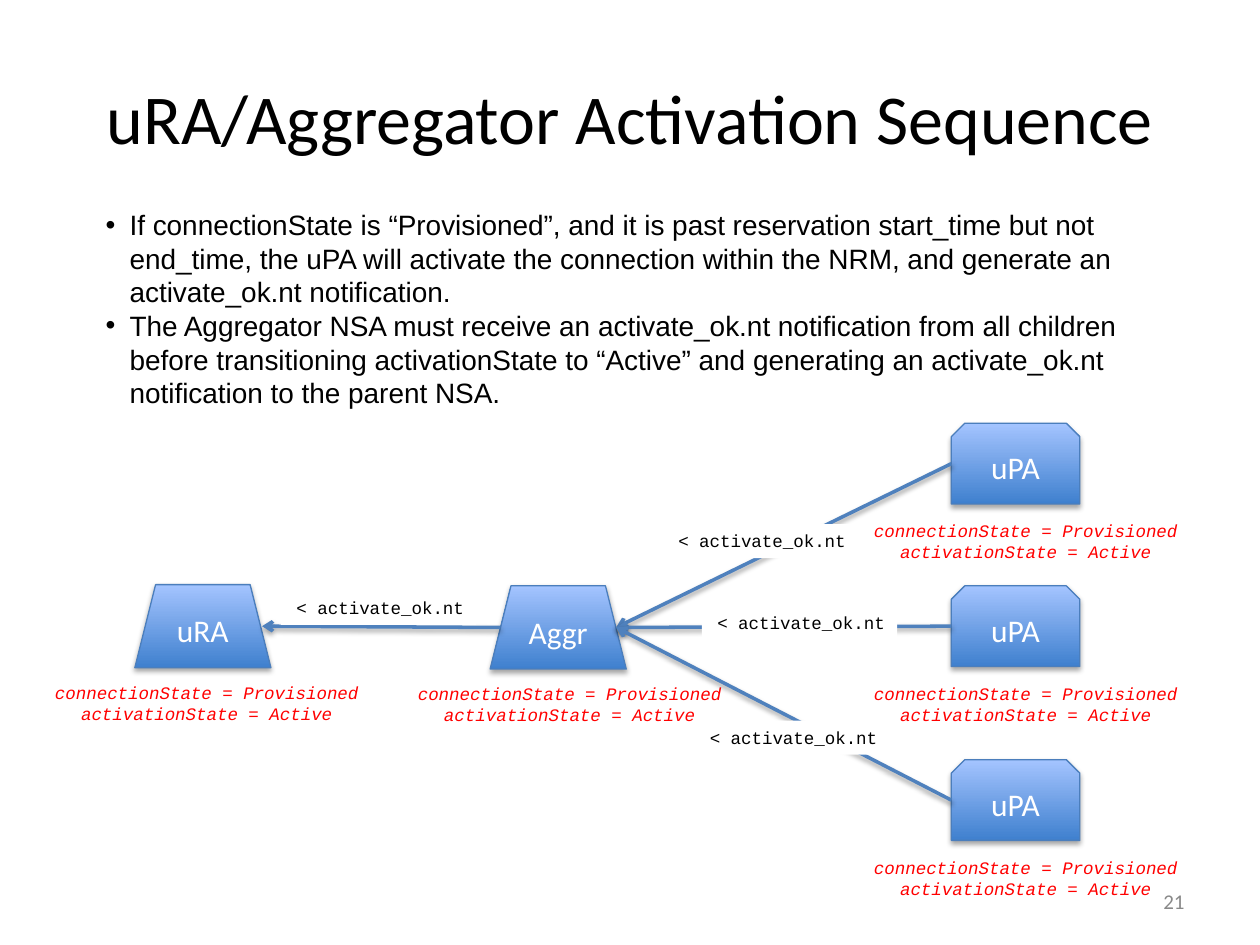
from dataclasses import dataclass

from lxml.etree import SubElement
from pptx import Presentation
from pptx.dml.color import RGBColor
from pptx.enum.shapes import MSO_CONNECTOR as Connector, MSO_SHAPE as Preset
from pptx.enum.text import MSO_ANCHOR as Anchor, PP_ALIGN as Align
from pptx.oxml.ns import qn
from pptx.util import Inches, Pt

STATE = ["connectionState = Provisioned", "activationState = Active"]
MESSAGE = "< activate_ok.nt"
BULLETS = [
    "If connectionState is “Provisioned”, and it is past reservation start_time "
    "but not end_time, the uPA will activate the connection within the NRM, "
    "and generate an activate_ok.nt notification.",
    "The Aggregator NSA must receive an activate_ok.nt notification from all "
    "children before transitioning activationState to “Active” and generating "
    "an activate_ok.nt notification to the parent NSA.",
]


@dataclass(frozen=True)
class TextStyle:
    font: str
    size: float
    color: str
    align: Align = Align.CENTER
    anchor: Anchor = Anchor.TOP
    italic: bool = False


@dataclass(frozen=True)
class Node:
    name: str
    preset: Preset
    left: float
    top: float
    width: float
    height: float
    state_left: float


@dataclass(frozen=True)
class Message:
    start: tuple[float, float]
    end: tuple[float, float]
    label: tuple[float, float]


TITLE = TextStyle("Calibri", 40, "000000", anchor=Anchor.MIDDLE)
BODY = TextStyle("Arial", 16, "000000", Align.LEFT)
NODE = TextStyle("Calibri", 18, "FFFFFF", anchor=Anchor.MIDDLE)
STATUS = TextStyle("Courier New", 10, "FF0000", italic=True)
LABEL = TextStyle("Courier New", 10, "000000", Align.RIGHT)
NUMBER = TextStyle("Calibri", 12, "898989", Align.RIGHT, Anchor.MIDDLE)

PROVIDER_TOPS = [3.36, 4.65, 6.03]
NODES = [
    Node("uRA", Preset.TRAPEZOID, 1.07, 4.64, 1.08, 0.66, 0.29),
    Node("Aggr", Preset.TRAPEZOID, 3.89, 4.65, 1.08, 0.66, 3.17),
] + [
    Node("uPA", Preset.SNIP_2_SAME_RECTANGLE, 7.55, top, 1.02, 0.64, 6.79)
    for top in PROVIDER_TOPS
]
PROVIDER_LABELS = [(5.26, 4.16), (5.57, 4.81), (5.51, 5.72)]
MESSAGES = [Message((3.97, 4.98), (2.08, 4.97), (2.23, 4.69))] + [
    Message((7.55, top + 0.32), (4.89, 4.98), label)
    for top, label in zip(PROVIDER_TOPS, PROVIDER_LABELS)
]


def rgb(color: str) -> RGBColor:
    return RGBColor.from_string(color)


def write(box, lines: list[str], style: TextStyle, wrap: bool = True) -> None:
    frame = box.text_frame
    frame.word_wrap = wrap
    frame.vertical_anchor = style.anchor
    frame.text = "\n".join(lines)
    for para in frame.paragraphs:
        para.alignment = style.align
        para.font.name = style.font
        para.font.size = Pt(style.size)
        para.font.color.rgb = rgb(style.color)
        para.font.italic = style.italic


def add_text(page, left: float, top: float, width: float, height: float,
             lines: list[str], style: TextStyle):
    box = page.shapes.add_textbox(
        Inches(left), Inches(top), Inches(width), Inches(height))
    write(box, lines, style)
    return box


def add_bullets(box) -> None:
    for para in box.text_frame.paragraphs:
        properties = para._p.get_or_add_pPr()
        properties.set("marL", str(Inches(0.19)))
        properties.set("indent", str(-Inches(0.19)))
        SubElement(properties, qn("a:buFont"), typeface="Arial")
        SubElement(properties, qn("a:buChar"), char="•")


def add_shadow(item, distance: float, opacity: int) -> None:
    effects = SubElement(item._element.spPr, qn("a:effectLst"))
    shadow = SubElement(
        effects, qn("a:outerShdw"), blurRad=str(Pt(3.1)),
        dist=str(Pt(distance)), dir="5400000", rotWithShape="0")
    color = SubElement(shadow, qn("a:srgbClr"), val="000000")
    SubElement(color, qn("a:alpha"), val=str(opacity * 1000))


def add_node(page, node: Node) -> None:
    box = page.shapes.add_shape(
        node.preset, Inches(node.left), Inches(node.top),
        Inches(node.width), Inches(node.height))
    box.fill.gradient()
    box.fill.gradient_angle = 90
    for stop, position, color in zip(
            box.fill.gradient_stops, (0, 1), ("3F80CE", "A4C4FF")):
        stop.position = position
        stop.color.rgb = rgb(color)
    box.line.color.rgb = rgb("4B7EBC")
    box.line.width = Pt(0.75)
    add_shadow(box, 1.8, 35)
    write(box, [node.name], NODE)
    add_text(page, node.state_left, node.top + 0.72, 2.7, 0.44, STATE, STATUS)


def add_arrow(page, message: Message) -> None:
    points = [Inches(value) for value in message.start + message.end]
    arrow = page.shapes.add_connector(Connector.STRAIGHT, *points)
    arrow.line.color.rgb = rgb("4F81BD")
    arrow.line.width = Pt(2)
    SubElement(arrow.line._get_or_add_ln(), qn("a:tailEnd"), type="arrow")
    add_shadow(arrow, 1.6, 38)


def add_label(page, message: Message) -> None:
    left, top = message.label
    box = page.shapes.add_shape(
        Preset.RECTANGLE, Inches(left), Inches(top), Inches(1.55), Inches(0.27))
    box.shadow.inherit = False
    box.fill.solid()
    box.fill.fore_color.rgb = rgb("FFFFFF")
    box.line.fill.background()
    write(box, [MESSAGE], LABEL, wrap=False)


def main() -> None:
    deck = Presentation()
    deck.slide_width, deck.slide_height = Inches(10), Inches(7.5)
    page = deck.slides.add_slide(deck.slide_layouts[6])
    add_text(page, 0.5, 0.3, 9, 1.25,
             ["uRA/Aggregator Activation Sequence"], TITLE)
    add_bullets(add_text(page, 0.74, 1.6, 8.36, 1.72, BULLETS, BODY))
    for node in NODES:
        add_node(page, node)
    for message in MESSAGES:
        add_arrow(page, message)
    for message in MESSAGES:
        add_label(page, message)
    add_text(page, 7.17, 6.95, 2.33, 0.4, ["21"], NUMBER)
    deck.save("out.pptx")


if __name__ == "__main__":
    main()
